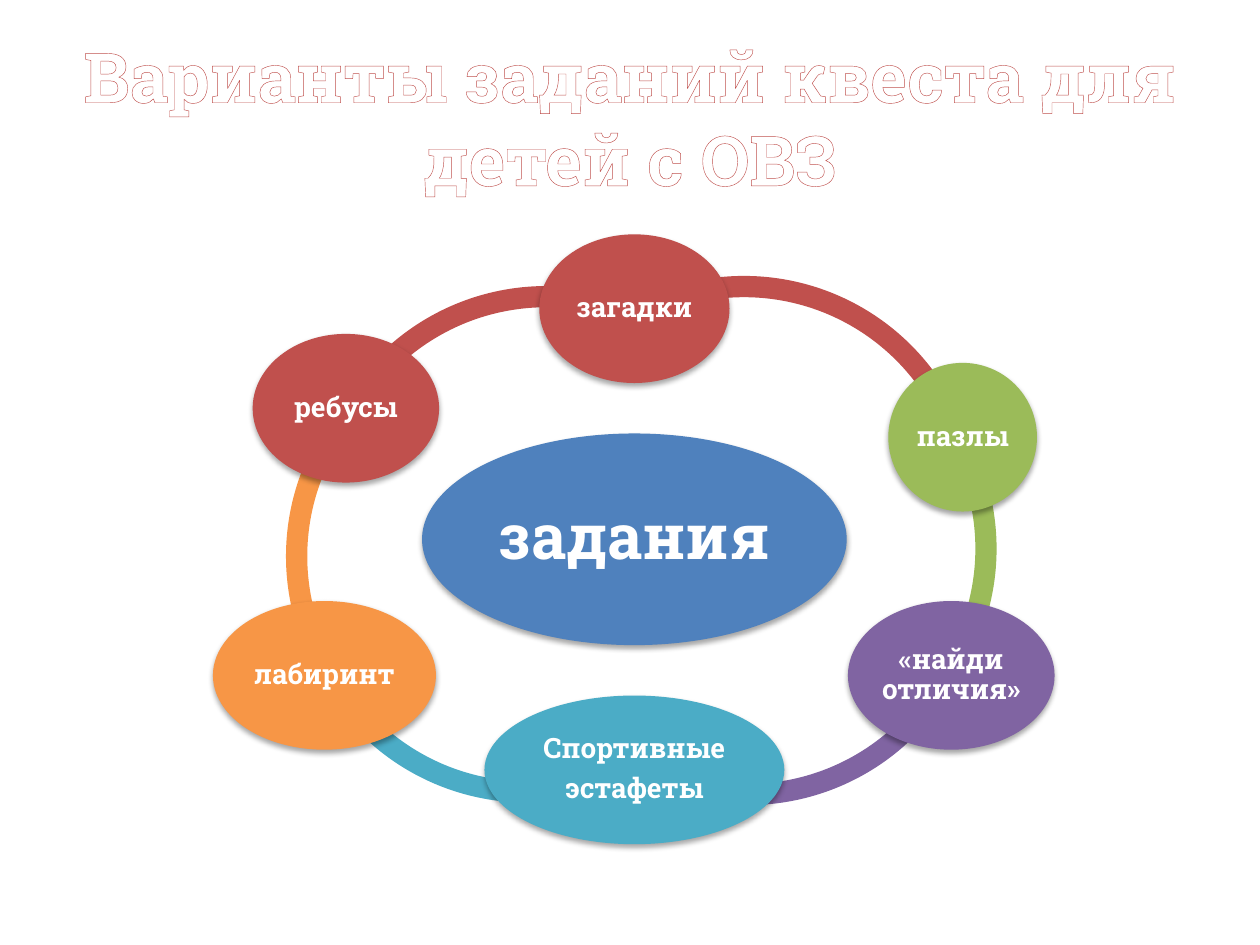
from lxml.etree import SubElement
from pptx import Presentation
from pptx.dml.color import RGBColor as Rgb
from pptx.enum.shapes import MSO_SHAPE as Kind
from pptx.enum.text import MSO_ANCHOR as Anchor, PP_ALIGN as Align
from pptx.oxml import parse_xml
from pptx.oxml.ns import qn
from pptx.util import Inches, Pt

HUES = {"white": "FFFFFF", "blue": "4F81BD", "red": "C0504D", "green": "9BBB59",
        "violet": "8064A2", "teal": "4BACC6", "orange": "F79646", "black": "000000"}
NS = "http://schemas.openxmlformats.org/drawingml/2006/main"

deck = Presentation()
deck.slide_width, deck.slide_height = Inches(10), Inches(7.5)
slide = deck.slides.add_slide(deck.slide_layouts[6])
shapes = slide.shapes
CELL = deck.slide_width / 100  # grid of 100 columns by 75 rows


def draw(kind, hue, *box):
    """Add a plain filled shape; box is left, top, width, height in cells."""
    shape = shapes.add_shape(kind, *(round(n * CELL) for n in box))
    shape.shadow.inherit = False
    shape.fill.solid()
    shape.fill.fore_color.rgb = Rgb.from_string(HUES[hue])
    shape.line.fill.background()
    return shape


def write(shape, lines, size, inset, **look):
    """Fill a shape with centred bold text, one paragraph a line."""
    frame = shape.text_frame
    form = {"word_wrap": True, "vertical_anchor": Anchor.MIDDLE,
            "margin_left": inset, "margin_right": inset,
            "margin_top": min(inset, Inches(0.05)),
            "margin_bottom": min(inset, Inches(0.05))}
    for key, value in form.items():
        setattr(frame, key, value)
    frame.text = "\n".join(lines)
    for para in frame.paragraphs:
        for key, value in {"alignment": Align.CENTER, **look}.items():
            setattr(para, key, value)
        font = para.runs[0].font
        for key, value in {"name": "Roboto Slab", "size": Pt(size), "bold": True}.items():
            setattr(font, key, value)
        font.color.rgb = Rgb.from_string(HUES["white"])


# Ring: left, top, start and end angle in degrees
arcs = [("red", 24.6, 22.7, 209.71, 292.32),
        ("orange", 22.7, 25.4, 148.94, 220.22),
        ("teal", 23.1, 26.2, 62.43, 151.47),
        ("violet", 40.6, 26.4, 27.53, 119.44),
        ("green", 41.6, 24.8, 331.37, 33.6),
        ("red", 40.3, 21.9, 241.58, 341.28)]
for hue, left, top, start, end in arcs:
    arc = draw(Kind.BLOCK_ARC, hue, left, top, 37.5, 37.5)
    for i, value in enumerate((start * 0.6, end * 0.6, 0.045)):
        arc.adjustments[i] = value

# Ovals: centre column and row, width, height, text size, inset
NODE = (11.8, 16, 0.02)
ovals = [("blue", ["задания"], 50.35, 42.8, 33.7, 16.8, 36, 0.05),
         ("red", ["загадки"], 50.35, 24.5, 15.1, *NODE),
         ("green", ["пазлы"], 76.4, 34.7, 11.8, *NODE),
         ("violet", ["«найди отличия»"], 75.5, 53.6, 16.4, *NODE),
         ("teal", ["Спортивные", "эстафеты"], 50.35, 61.1, 23.8, *NODE),
         ("orange", ["лабиринт"], 25.75, 53.6, 17.7, *NODE),
         ("red", ["ребусы"], 27.45, 32.4, 14.8, *NODE)]
for hue, lines, x, y, wide, high, size, inset in ovals:
    oval = draw(Kind.OVAL, hue, x - wide / 2, y - high / 2, wide, high)
    write(oval, lines, size, Inches(inset), line_spacing=0.9, space_after=Pt(size * 0.35))
    glow = SubElement(oval._element.spPr.find(qn("a:effectLst")), qn("a:outerShdw"),
                      blurRad=str(Pt(3.1)), dist=str(Pt(1.8)), dir="5400000", rotWithShape="0")
    tint = SubElement(glow, qn("a:srgbClr"), val=HUES["black"])
    SubElement(tint, qn("a:alpha"), val="35000")

title = shapes.add_textbox(*(round(n * CELL) for n in (5, 3, 90, 12.5)))
write(title, ["Варианты заданий квеста для детей с ОВЗ"], 39.6, Inches(0.1))
edge = parse_xml(f'<a:ln xmlns:a="{NS}" w="{Pt(0.52)}"><a:solidFill>'
                 f'<a:srgbClr val="{HUES["red"]}"/></a:solidFill></a:ln>')
title.text_frame.paragraphs[0].runs[0].font._element.insert(0, edge)

deck.save("out.pptx")
